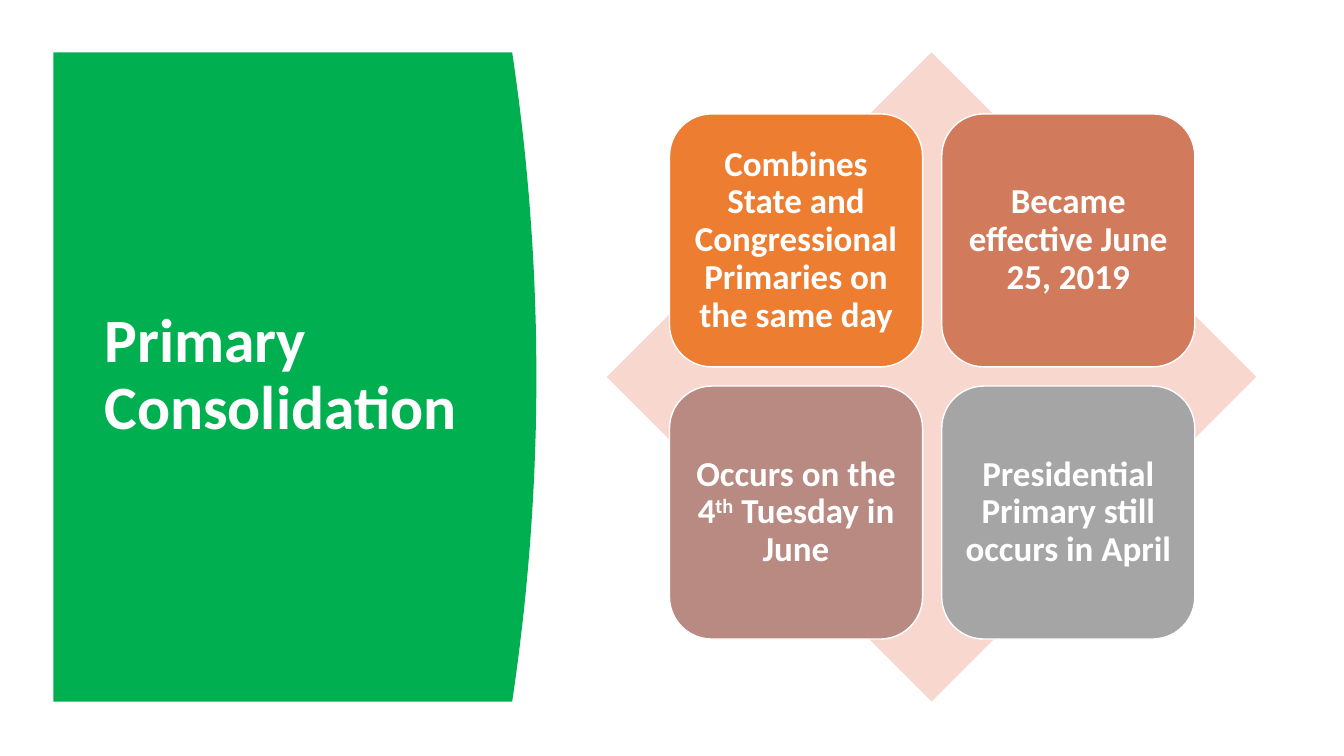
"""Build the Primary Consolidation slide: a curved title panel and four tiles on a diamond."""
from pptx import Presentation
from pptx import util as u
from pptx.dml import color
from pptx.enum import shapes, text

deck = Presentation()
deck.slide_width, deck.slide_height = u.Inches(13.33), u.Inches(7.5)
slide = deck.slides.add_slide(deck.slide_layouts[6])


def paint(shape, fill, line=None):
    shape.shadow.inherit = False
    shape.fill.solid()
    shape.fill.fore_color.rgb = color.RGBColor.from_string(fill)
    if line:
        shape.line.color.rgb = color.RGBColor.from_string(line)
        shape.line.width = u.Pt(1)
    else:
        shape.line.fill.background()


def write(shape, parts, size, align):
    frame = shape.text_frame
    frame.word_wrap = True
    frame.vertical_anchor = text.MSO_ANCHOR.MIDDLE
    frame.margin_left = frame.margin_right = u.Inches(0.1)
    frame.margin_top = frame.margin_bottom = u.Inches(0.1)
    para = frame.paragraphs[0]
    para.alignment = align
    para.line_spacing = 0.9
    for part in parts:
        run = para.add_run()
        run.text = part
        run.font.name, run.font.size, run.font.bold = "Calibri", u.Pt(size), True
        run.font.color.rgb = color.RGBColor.from_string("FFFFFF")
        if part == "th":
            run.font._element.set("baseline", "30000")


left, top, tall = 0.53, 0.52, 6.44
edge, bulge, steps = 5.08, 0.24, 48
curve = []
for step in range(steps + 1):
    share = step / steps
    curve.append((edge + bulge * 4 * share * (1 - share), top + tall * share))
pen = slide.shapes.build_freeform(u.Inches(left), u.Inches(top), scale=1.0)
pen.add_line_segments(
    [(u.Inches(x), u.Inches(y)) for x, y in curve + [(left, top + tall)]], close=True)
paint(pen.convert_to_shape(), "00B050")

title = slide.shapes.add_textbox(
    u.Inches(0.94), u.Inches(1.11), u.Inches(3.74), u.Inches(5.24))
write(title, ["Primary Consolidation"], 44, text.PP_ALIGN.LEFT)

back = slide.shapes.add_shape(
    shapes.MSO_SHAPE.DIAMOND, u.Inches(6.02), u.Inches(top), u.Inches(tall), u.Inches(tall))
paint(back, "F8D7CE")

tiles = [
    ("ED7D31", ["Combines State and Congressional Primaries on the same day"]),
    ("D17B5C", ["Became effective June 25, 2019"]),
    ("B98A82", ["Occurs on the 4", "th", " Tuesday in June"]),
    ("A5A5A5", ["Presidential Primary still occurs in April"]),
]
side, pitch = 2.51, 2.7
for spot, (fill, parts) in enumerate(tiles):
    row, col = divmod(spot, 2)
    tile = slide.shapes.add_shape(
        shapes.MSO_SHAPE.ROUNDED_RECTANGLE, u.Inches(6.64 + col * pitch),
        u.Inches(1.13 + row * pitch), u.Inches(side), u.Inches(side))
    paint(tile, fill, "FFFFFF")
    write(tile, parts, 25, text.PP_ALIGN.CENTER)

deck.save("out.pptx")
